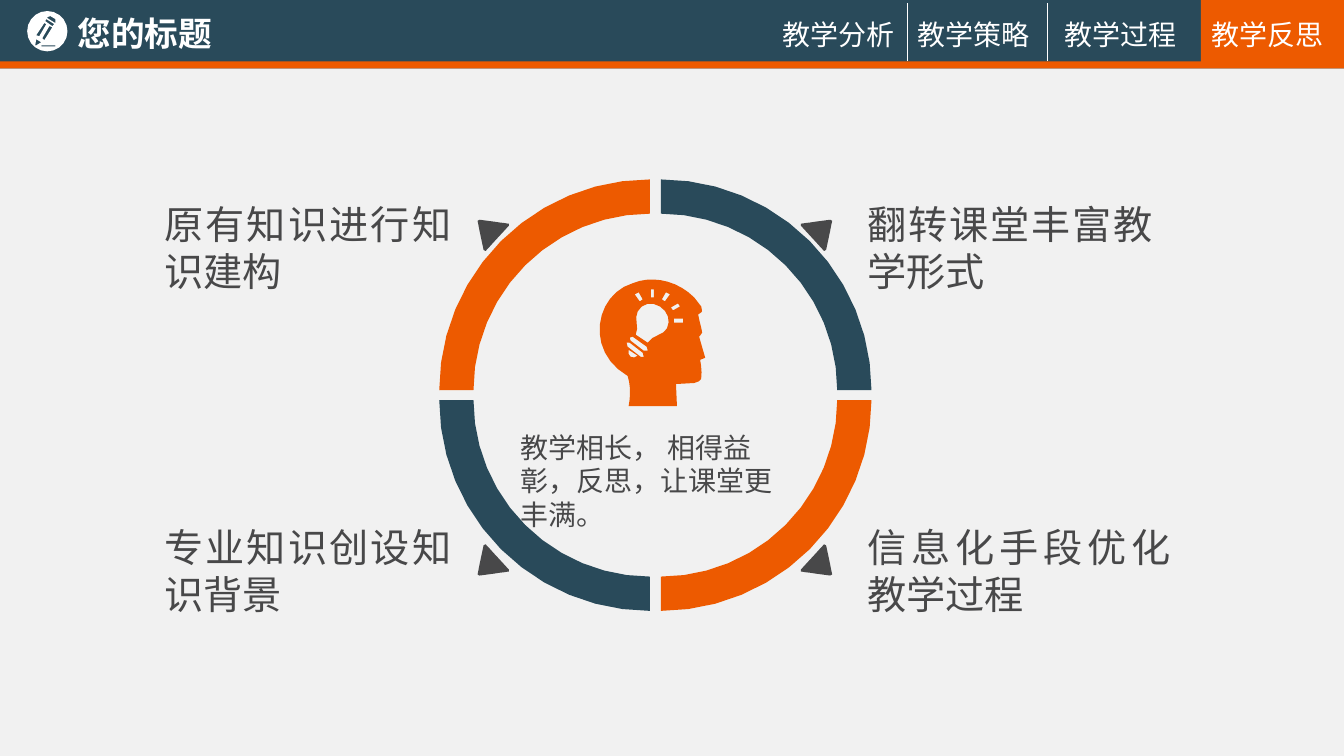
from math import cos, dist, pi, sin

from lxml.etree import SubElement
from pptx import Presentation
from pptx.dml.color import RGBColor
from pptx.enum.shapes import MSO_CONNECTOR, MSO_SHAPE
from pptx.enum.text import MSO_ANCHOR, MSO_AUTO_SIZE, PP_ALIGN
from pptx.oxml.ns import qn
from pptx.util import Inches, Pt

FONT = "Noto Sans CJK SC"
NAVY = RGBColor(0x29, 0x4A, 0x5A)
ORANGE = RGBColor(0xED, 0x5A, 0x00)
GREY = RGBColor(0x48, 0x48, 0x49)
WHITE = RGBColor(0xFF, 0xFF, 0xFF)
PAPER = RGBColor(0xF1, 0xF1, 0xF1)

SLIDE_WIDTH = 13.34
RING_OUTER, RING_INNER = 2.09, 1.75
RING_LEFT, RING_RIGHT, RING_UPPER, RING_LOWER = 6.45, 6.56, 3.87, 3.97
ARROW_SPAN_X, ARROW_SPAN_Y = 13, 7.89

# Outlines: a pair is a corner, six numbers are a Bezier curve
ARROW = [(4.76, 2.18), (4.91, 2.2), (4.96, 2.21, 5, 2.21, 5.05, 2.22),
         (5.07, 2.22, 5.06, 2.23, 5.05, 2.24), (4.94, 2.36),
         (4.9, 2.4, 4.86, 2.45, 4.82, 2.49), (4.8, 2.5, 4.8, 2.49, 4.8, 2.48),
         (4.77, 2.34), (4.76, 2.29, 4.75, 2.24, 4.74, 2.19),
         (4.74, 2.18, 4.75, 2.17, 4.76, 2.18)]
PENCIL = [
    [(0.41, 0.45), (0.55, 0.45), (0.55, 0.46), (0.41, 0.46)],
    [(0.42, 0.38), (0.49, 0.26), (0.52, 0.27), (0.44, 0.4)],
    [(0.36, 0.35), (0.44, 0.23), (0.46, 0.24), (0.39, 0.36)],
    [(0.35, 0.45), (0.36, 0.39), (0.41, 0.42), (0.36, 0.45)],
    [(0.46, 0.19), (0.45, 0.21), (0.52, 0.26), (0.54, 0.24)],
    [(0.47, 0.17), (0.48, 0.16, 0.49, 0.16, 0.5, 0.16), (0.55, 0.19),
     (0.55, 0.2, 0.56, 0.21, 0.55, 0.21), (0.55, 0.23), (0.47, 0.18)],
]
HEAD = [
    [(6.24, 4.03), (6.26, 3.93, 6.26, 3.82, 6.23, 3.73),
     (5.8, 3.48, 5.91, 2.92, 6.28, 2.81), (6.47, 2.73, 6.72, 2.78, 6.89, 2.95),
     (7.01, 3.07, 6.96, 3.1, 6.96, 3.1), (6.93, 3.12),
     (6.94, 3.18, 6.97, 3.28, 6.97, 3.3), (6.96, 3.32, 6.94, 3.34, 6.94, 3.34),
     (7, 3.55), (6.95, 3.57), (6.96, 3.63, 6.97, 3.69, 6.96, 3.76),
     (6.96, 3.77, 6.92, 3.8, 6.89, 3.8), (6.71, 3.81), (6.72, 4.03)],
    # bulb and its screw base
    [(6.55, 3.04), (6.47, 2.99, 6.37, 3.01, 6.33, 3.09),
     (6.29, 3.16, 6.35, 3.25, 6.31, 3.32), (6.43, 3.4),
     (6.48, 3.32, 6.58, 3.33, 6.62, 3.26), (6.66, 3.18, 6.63, 3.09, 6.55, 3.04)],
    [(6.42, 3.44), (6.28, 3.34), (6.27, 3.33, 6.26, 3.33, 6.25, 3.35),
     (6.25, 3.36, 6.25, 3.37, 6.26, 3.38), (6.39, 3.48),
     (6.41, 3.49, 6.42, 3.49, 6.43, 3.48), (6.43, 3.47, 6.43, 3.45, 6.42, 3.44)],
    [(6.38, 3.5), (6.25, 3.4), (6.24, 3.39, 6.22, 3.39, 6.22, 3.4),
     (6.21, 3.42, 6.21, 3.43, 6.23, 3.44), (6.36, 3.54),
     (6.37, 3.55, 6.39, 3.55, 6.39, 3.54), (6.4, 3.53, 6.39, 3.51, 6.38, 3.5)],
    [(6.24, 3.47), (6.23, 3.49, 6.24, 3.53, 6.26, 3.54),
     (6.28, 3.55, 6.31, 3.55, 6.33, 3.53)],
    # rays
    [(6.6, 2.99), (6.65, 2.92), (6.61, 2.9), (6.57, 2.97)],
    [(6.68, 3.08), (6.75, 3.04), (6.73, 3.01), (6.66, 3.05)],
    [(6.49, 2.95), (6.49, 2.87), (6.46, 2.87), (6.46, 2.95)],
    [(6.38, 2.97), (6.34, 2.9), (6.3, 2.92), (6.35, 2.99)],
    [(6.69, 3.2), (6.78, 3.2), (6.78, 3.16), (6.69, 3.16)],
]


def paint(shape, colour):
    shape.shadow.inherit = False
    shape.fill.solid()
    shape.fill.fore_color.rgb = colour
    shape.line.fill.background()


def add_bar(slide, left, top, width, height, colour):
    paint(slide.shapes.add_shape(MSO_SHAPE.RECTANGLE, Inches(left), Inches(top),
                                 Inches(width), Inches(height)), colour)


def flatten(outline):
    points = []
    for node in outline:
        if len(node) == 2:
            points.append(node)
            continue
        curve = [points[-1], node[:2], node[2:4], node[4:]]
        steps = 1 + round(12 * dist(curve[0], curve[3]))  # longer curves get more points
        for step in range(1, steps + 1):
            t = step / steps
            weights = ((1 - t) ** 3, 3 * t * (1 - t) ** 2, 3 * t * t * (1 - t), t ** 3)
            points.append(tuple(sum(w * p[axis] for w, p in zip(weights, curve))
                                for axis in (0, 1)))
    return points


def arc(x, y, radius, start, end, steps=12):
    angles = [start + (end - start) * i / steps for i in range(steps + 1)]
    return [(x + radius * cos(a), y + radius * sin(a)) for a in angles]


def add_outline(slide, outlines, colour):
    contours = [[(Inches(x), Inches(y)) for x, y in flatten(o)] for o in outlines]
    builder = slide.shapes.build_freeform(*contours[0][0])
    for number, contour in enumerate(contours):
        if number:
            builder.move_to(*contour[0])
        builder.add_line_segments(contour[1:], close=True)
    paint(builder.convert_to_shape(), colour)


def write(box, text, size, colour, align=PP_ALIGN.LEFT, wrap=True, bold=False):
    frame = box.text_frame
    frame.text = text
    frame.word_wrap = wrap
    frame.auto_size = MSO_AUTO_SIZE.SHAPE_TO_FIT_TEXT
    frame.vertical_anchor = MSO_ANCHOR.TOP
    paragraph = frame.paragraphs[0]
    paragraph.alignment = align
    for run in paragraph.runs:
        run.font.name, run.font.size, run.font.bold = FONT, Pt(size), bold
        run.font.color.rgb = colour
        SubElement(run._r.get_or_add_rPr(), qn("a:ea")).set("typeface", FONT)


def add_text(slide, left, top, width, height, text, size, colour, **style):
    box = slide.shapes.add_textbox(Inches(left), Inches(top), Inches(width), Inches(height))
    write(box, text, size, colour, **style)
    return box.text_frame


def add_divider(slide, x):
    divider = slide.shapes.add_connector(MSO_CONNECTOR.STRAIGHT, Inches(x), Inches(0.03),
                                         Inches(x), Inches(0.61))
    divider.line.color.rgb = WHITE
    divider.line.width = Pt(0.25)
    SubElement(divider.element.spPr, qn("a:effectLst"))


def add_header(slide):
    add_bar(slide, 0, 0, SLIDE_WIDTH, 0.68, NAVY)
    add_bar(slide, 0, 0.61, SLIDE_WIDTH, 0.07, ORANGE)
    title = slide.shapes.title
    title.left, title.top, title.width, title.height = map(Inches, (0.67, 0.08, 1.55, 0.5))
    write(title, "您的标题", 24, WHITE, wrap=False, bold=True)
    slide.shapes.element.append(title.element)  # in front of the bars
    add_outline(slide, [arc(0.47, 0.31, 0.2, 0, 2 * pi, steps=20)[:-1]] + PENCIL, WHITE)


def add_navigation(slide):
    add_bar(slide, 11.92, 0, SLIDE_WIDTH - 11.92, 0.65, ORANGE)
    for left, section in ((7.77, "教学分析"), (9.11, "教学策略"),
                          (10.57, "教学过程"), (12.02, "教学反思")):
        frame = add_text(slide, left, 0.17, 1.12, 0.34, section, 20, WHITE, wrap=False)
        frame.margin_left = frame.margin_right = frame.margin_top = frame.margin_bottom = 0
    for x in (9, 10.39):
        add_divider(slide, x)


def add_ring(slide):
    quarters = ((RING_RIGHT, RING_LOWER, ORANGE), (RING_LEFT, RING_LOWER, NAVY),
                (RING_LEFT, RING_UPPER, ORANGE), (RING_RIGHT, RING_UPPER, NAVY))
    for quarter, (x, y, colour) in enumerate(quarters):
        start, end = quarter * pi / 2, (quarter + 1) * pi / 2
        add_outline(slide, [arc(x, y, RING_OUTER, start, end)
                            + arc(x, y, RING_INNER, end, start)], colour)


def add_arrows(slide):
    for flip_x in (False, True):
        for flip_y in (False, True):
            arrow = [(ARROW_SPAN_X - x if flip_x else x, ARROW_SPAN_Y - y if flip_y else y)
                     for x, y in flatten(ARROW)]
            add_outline(slide, [arrow], GREY)


def main():
    deck = Presentation()
    deck.slide_width, deck.slide_height = Inches(SLIDE_WIDTH), Inches(7.5)
    slide = deck.slides.add_slide(deck.slide_layouts[5])
    slide.background.fill.solid()
    slide.background.fill.fore_color.rgb = PAPER

    add_header(slide)
    add_ring(slide)
    add_arrows(slide)

    # Reflections around the ring
    for left, top, width, reflection in ((1.53, 1.94, 3.05, "原有知识进行知识建构"),
                                         (8.51, 1.94, 3.03, "翻转课堂丰富教学形式"),
                                         (1.53, 5.14, 3.05, "专业知识创设知识背景"),
                                         (8.51, 5.14, 3.21, "信息化手段优化教学过程")):
        add_text(slide, left, top, width, 1.04, reflection, 28, GREY, align=PP_ALIGN.JUSTIFY)

    # Centre of the ring
    add_text(slide, 5.07, 4.22, 2.72, 0.77, "教学相长， 相得益彰，反思，让课堂更丰满。", 20, GREY)
    add_outline(slide, HEAD, ORANGE)

    add_navigation(slide)
    deck.save("out.pptx")


if __name__ == "__main__":
    main()
